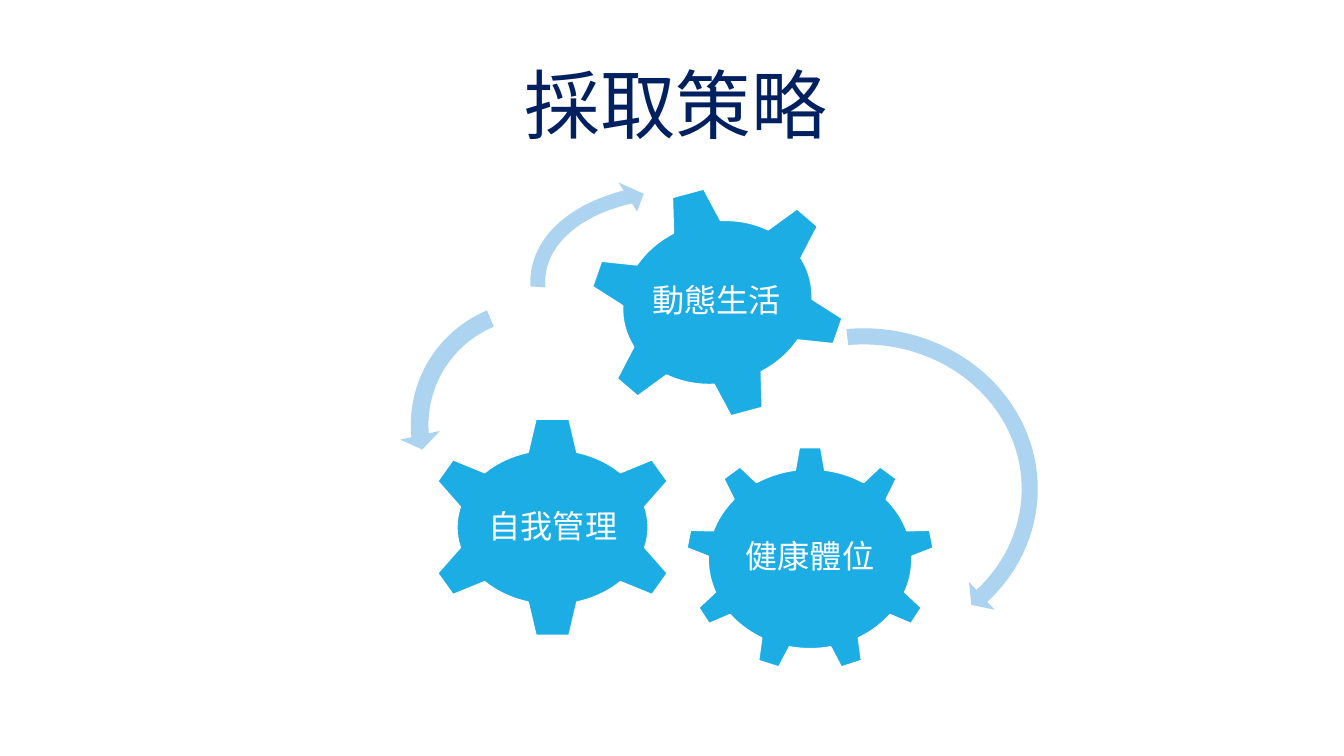
from pptx import Presentation, util as u
from pptx.dml.color import RGBColor
from pptx.enum import shapes, text

COLORS = {"title": "002060", "gear": "1CADE4", "arrow": "ACD3EF", "white": "FFFFFF"}
SHAPE = shapes.MSO_SHAPE

prs = Presentation()
prs.slide_width, prs.slide_height = u.Inches(13.33), u.Inches(7.5)
s = prs.slides.add_slide(prs.slide_layouts[5])


def box(left, top, width, height):
    """Turn percentages of the slide into lengths."""
    w, h = prs.slide_width / 100, prs.slide_height / 100
    return [u.Emu(round(n)) for n in (left * w, top * h, width * w, height * h)]


def write(tf, words, size, color):
    """Put one centred line into a text frame."""
    tf.word_wrap = False
    tf.vertical_anchor = text.MSO_ANCHOR.MIDDLE
    p = tf.paragraphs[0]
    p.alignment = text.PP_ALIGN.CENTER
    r = p.add_run()
    r.text = words
    r.font.name, r.font.size = "Cabin", u.Pt(size)
    r.font.color.rgb = RGBColor.from_string(COLORS[color])
    return p


# Title
title = s.shapes.title
title.left, title.top, title.width, title.height = box(38.18, 6.93, 24.23, 13.47)
write(title.text_frame, "採取策略", 54, "title")

# Gears, each with an upright label
gears = [
    ("健康體位", SHAPE.GEAR_9, 0, (51.01, 59.07, 18.53, 29.73), (54.61, 66.13, 11.33, 15.33)),
    ("自我管理", SHAPE.GEAR_6, 0, (31.51, 55.07, 19.2, 29.33), (36.08, 62.53, 10.13, 14.53)),
    ("動態生活", SHAPE.GEAR_6, 345, (43.66, 24.67, 19.43, 30.67), (48.01, 31.07, 10.65, 17.73)),
]
for words, kind, turn, gear_box, label_box in gears:
    sp = s.shapes.add_shape(kind, *box(*gear_box))
    sp.rotation = turn
    sp.shadow.inherit = False
    sp.fill.solid()
    sp.fill.fore_color.rgb = RGBColor.from_string(COLORS["gear"])
    sp.line.color.rgb = RGBColor.from_string(COLORS["white"])
    sp.line.width = u.Pt(1.25)

    tf = s.shapes.add_textbox(*box(*label_box)).text_frame
    tf.margin_left = tf.margin_right = tf.margin_top = tf.margin_bottom = u.Inches(0.03)
    p = write(tf, words, 23, "white")
    p.line_spacing = 0.9

# Curved arrows around the gears
arrows = [
    (SHAPE.CIRCULAR_ARROW, 0, (50.49, 42, 27.53, 45.33), (0.047, 2.99, 25.291, 158.336, 0.055)),
    (SHAPE.LEFT_CIRCULAR_ARROW, 0, (29.71, 38.27, 20.18, 35.87), (0.065, 4.3, 104.891, 148.378, 0.075)),
    (SHAPE.CIRCULAR_ARROW, 8.8, (38.63, 23.2, 28.58, 32.67), (0.06, 3.941, 133.138, 105.082, 0.07)),
]
for kind, turn, arrow_box, bends in arrows:
    sp = s.shapes.add_shape(kind, *box(*arrow_box))
    sp.rotation = turn
    sp.shadow.inherit = False
    sp.fill.solid()
    sp.fill.fore_color.rgb = RGBColor.from_string(COLORS["arrow"])
    sp.line.fill.background()
    for i, bend in enumerate(bends):
        sp.adjustments[i] = bend

prs.save("out.pptx")
